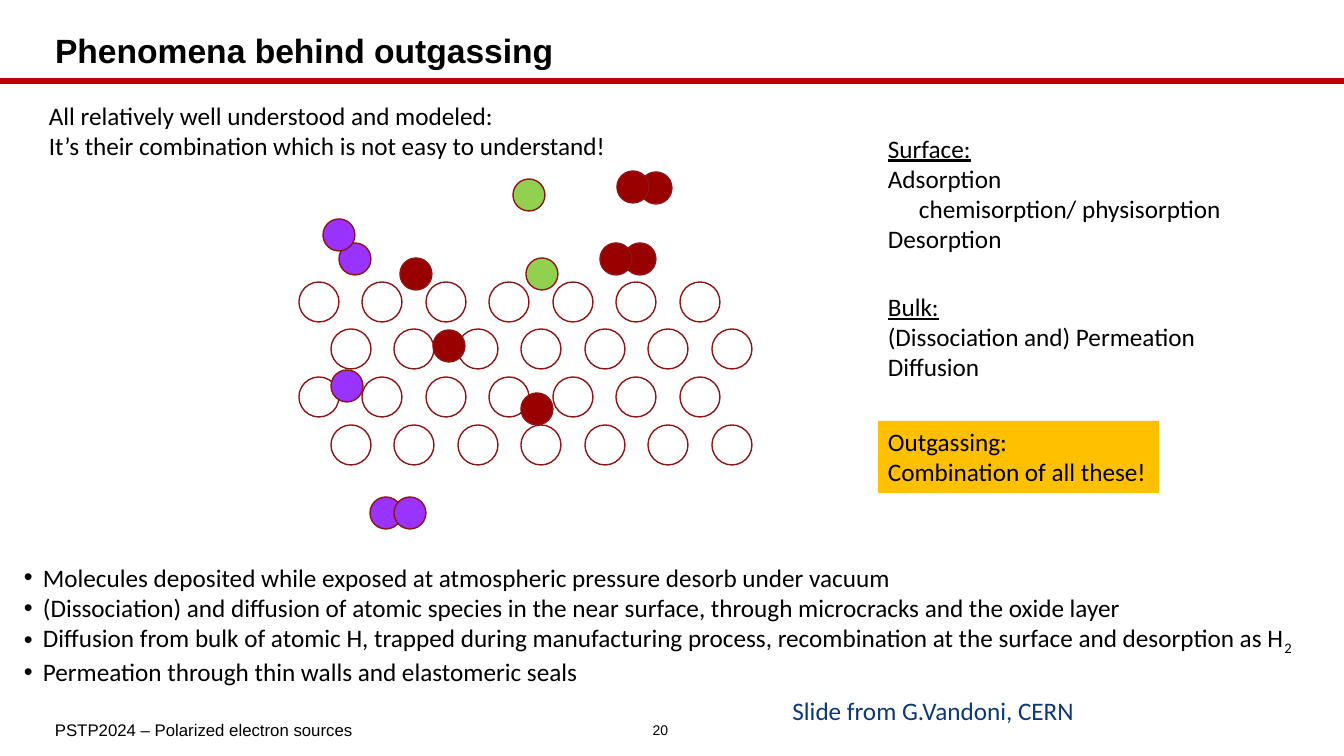
from lxml.etree import SubElement
from pptx import Presentation
from pptx.dml.color import RGBColor
from pptx.enum.shapes import MSO_CONNECTOR, MSO_SHAPE
from pptx.enum.text import MSO_ANCHOR, MSO_AUTO_SIZE, PP_ALIGN
from pptx.oxml.ns import qn
from pptx.util import Emu, Pt

STRAIGHT = MSO_CONNECTOR.STRAIGHT
ELLIPSE = MSO_SHAPE.OVAL
MIDDLE, TOP = MSO_ANCHOR.MIDDLE, MSO_ANCHOR.TOP
GROW, FIXED = MSO_AUTO_SIZE.SHAPE_TO_FIT_TEXT, MSO_AUTO_SIZE.NONE
LEFT, CENTER, RIGHT = PP_ALIGN.LEFT, PP_ALIGN.CENTER, PP_ALIGN.RIGHT

COLORS = {
    "black": "000000", "rule": "C00000", "outline": "8D1515", "amber": "FFC000",
    "red": "990000", "purple": "9933FF", "green": "92D050", "navy": "0C377B",
}
BODY = {"name": "Calibri", "size": Pt(18)}
HEADING = {**BODY, "underline": True}
TITLE = {"name": "Arial", "size": Pt(24), "bold": True}
FOOTER = {"name": "Arial", "size": Pt(12)}
NUMBER = {"name": "Arial", "size": Pt(10)}

NOTES = [
    ((39, 95, 584, 72), ["All relatively well understood and modeled:",
                         "It’s their combination which is not easy to understand!"]),
    ((878, 128, 358, 132), ["Surface:", "Adsorption",
                            "\tchemisorption/ physisorption", "Desorption"]),
    ((878, 286, 332, 102), ["Bulk:", "(Dissociation and) Permeation", "Diffusion"]),
]
SUMMARY = ["Outgassing:", "Combination of all these!"]
HEADINGS = ("Surface:", "Bulk:")
MECHANISMS = [
    "Molecules deposited while exposed at atmospheric pressure desorb under vacuum",
    "(Dissociation) and diffusion of atomic species in the near surface, "
    "through microcracks and the oxide layer",
    "Diffusion from bulk of atomic H, trapped during manufacturing process, "
    "recombination at the surface and desorption as H",
    "Permeation through thin walls and elastomeric seals",
]
LATTICE_ROWS, LATTICE_COLUMNS = 4, 7
LATTICE_LEFT, LATTICE_TOP, LATTICE_SHIFT = 299, 282, 32
LATTICE_WIDTH, LATTICE_HEIGHT = 381, 143
SITE, ATOM = 40, 32
ATOMS = [
    ("red", 400, 258), ("red", 433, 330), ("red", 624, 243), ("red", 600, 243),
    ("red", 521, 393), ("purple", 370, 497), ("purple", 339, 243),
    ("purple", 323, 219), ("green", 526, 258), ("green", 513, 179),
    ("red", 640, 172), ("red", 617, 171), ("purple", 394, 497), ("purple", 331, 370),
]


class SlideBuilder:
    """Holds the scale, colours and current slide, and adds its elements."""

    def __init__(self, deck, width, height):
        self.scale = 914400 / 100.8
        deck.slide_width, deck.slide_height = self.px(width), self.px(height)
        self.page = deck.slides.add_slide(deck.slide_layouts[5])

    def px(self, length):
        return Emu(round(length * self.scale))

    def color(self, name):
        return RGBColor.from_string(COLORS[name])

    def apply(self, target, formats):
        for key, value in formats.items():
            setattr(target, key, value)

    def fill(self, shape, color):
        shape.fill.solid()
        shape.fill.fore_color.rgb = self.color(color)

    def span(self, para, text, font, color="black"):
        span = para.add_run()
        span.text = text
        self.apply(span.font, font)
        span.font.color.rgb = self.color(color)
        return span

    def title(self, area, text):
        box = self.page.shapes.title
        sides = ("left", "top", "width", "height")
        self.apply(box, dict(zip(sides, map(self.px, area))))
        self.apply(box.text_frame, {"vertical_anchor": MIDDLE, "auto_size": FIXED,
                                    "word_wrap": True})
        para = box.text_frame.paragraphs[0]
        self.apply(para, {"alignment": LEFT, "line_spacing": 0.9})
        self.span(para, text, TITLE)

    def text(self, area, lines, font=BODY, color="black", align=LEFT,
             anchor=TOP, wrap=True, size=GROW):
        box = self.page.shapes.add_textbox(*map(self.px, area))
        frame = box.text_frame
        self.apply(frame, {"word_wrap": wrap, "auto_size": size,
                           "vertical_anchor": anchor})
        for index, line in enumerate(lines):
            para = frame.add_paragraph() if index else frame.paragraphs[0]
            para.alignment = align
            if line.startswith("\t"):
                self.tab(para, 31)
            self.span(para, line, HEADING if line in HEADINGS else font, color)
        return box

    def tab(self, para, position):
        stops = SubElement(para._p.get_or_add_pPr(), qn("a:tabLst"))
        SubElement(stops, qn("a:tab"), pos=str(self.px(position)), algn="l")

    def bullet(self, para, indent):
        properties = para._p.get_or_add_pPr()
        properties.set("marL", str(self.px(indent)))
        properties.set("indent", str(-self.px(indent)))
        SubElement(properties, qn("a:buFont"), typeface="Arial")
        SubElement(properties, qn("a:buChar"), char="•")

    def subscript(self, para, text):
        span = self.span(para, text, BODY)
        span._r.get_or_add_rPr().set("baseline", "-25000")

    def circle(self, left, top, diameter, color=None):
        area = map(self.px, (left, top, diameter, diameter))
        circle = self.page.shapes.add_shape(ELLIPSE, *area)
        circle.shadow.inherit = False
        if color:
            self.fill(circle, color)
        else:
            circle.fill.background()
        circle.line.color.rgb = self.color("outline")
        circle.line.width = Pt(1)

    def rule(self, left, right, top):
        ends = map(self.px, (left, top, right, top))
        rule = self.page.shapes.add_connector(STRAIGHT, *ends)
        rule.line.color.rgb = self.color("rule")
        rule.line.width = Pt(4.5)
        SubElement(rule._element.spPr, qn("a:effectLst"))


def main():
    deck = Presentation()
    slide = SlideBuilder(deck, 1344, 756)
    slide.rule(-2, 1344, 81)
    slide.title((45, 26, 1244, 53), "Phenomena behind outgassing")
    slide.text((45, 713, 576, 34), ["PSTP2024 – Polarized electron sources"],
               FOOTER, anchor=MIDDLE, size=FIXED)
    slide.text((621, 713, 79, 33), ["20"], NUMBER, align=CENTER,
               anchor=MIDDLE, size=FIXED)

    for area, lines in NOTES:
        slide.text(area, lines, wrap=False)
    summary = slide.text((878, 421, 281, 72), SUMMARY, wrap=False)
    slide.fill(summary, "amber")

    mechanisms = slide.text((14, 557, 1332, 132), MECHANISMS)
    for para in mechanisms.text_frame.paragraphs:
        slide.bullet(para, 19)
    slide.subscript(mechanisms.text_frame.paragraphs[2], "2")

    for row in range(LATTICE_ROWS):
        top = LATTICE_TOP + row * LATTICE_HEIGHT // (LATTICE_ROWS - 1)
        for column in range(LATTICE_COLUMNS):
            left = LATTICE_LEFT + column * LATTICE_WIDTH // (LATTICE_COLUMNS - 1)
            slide.circle(left + row % 2 * LATTICE_SHIFT, top, SITE)
    for color, left, top in ATOMS:
        slide.circle(left, top, ATOM, color)

    slide.text((410, 690, 674, 40), ["Slide from G.Vandoni, CERN"],
               color="navy", align=RIGHT)
    deck.save("out.pptx")


if __name__ == "__main__":
    main()
